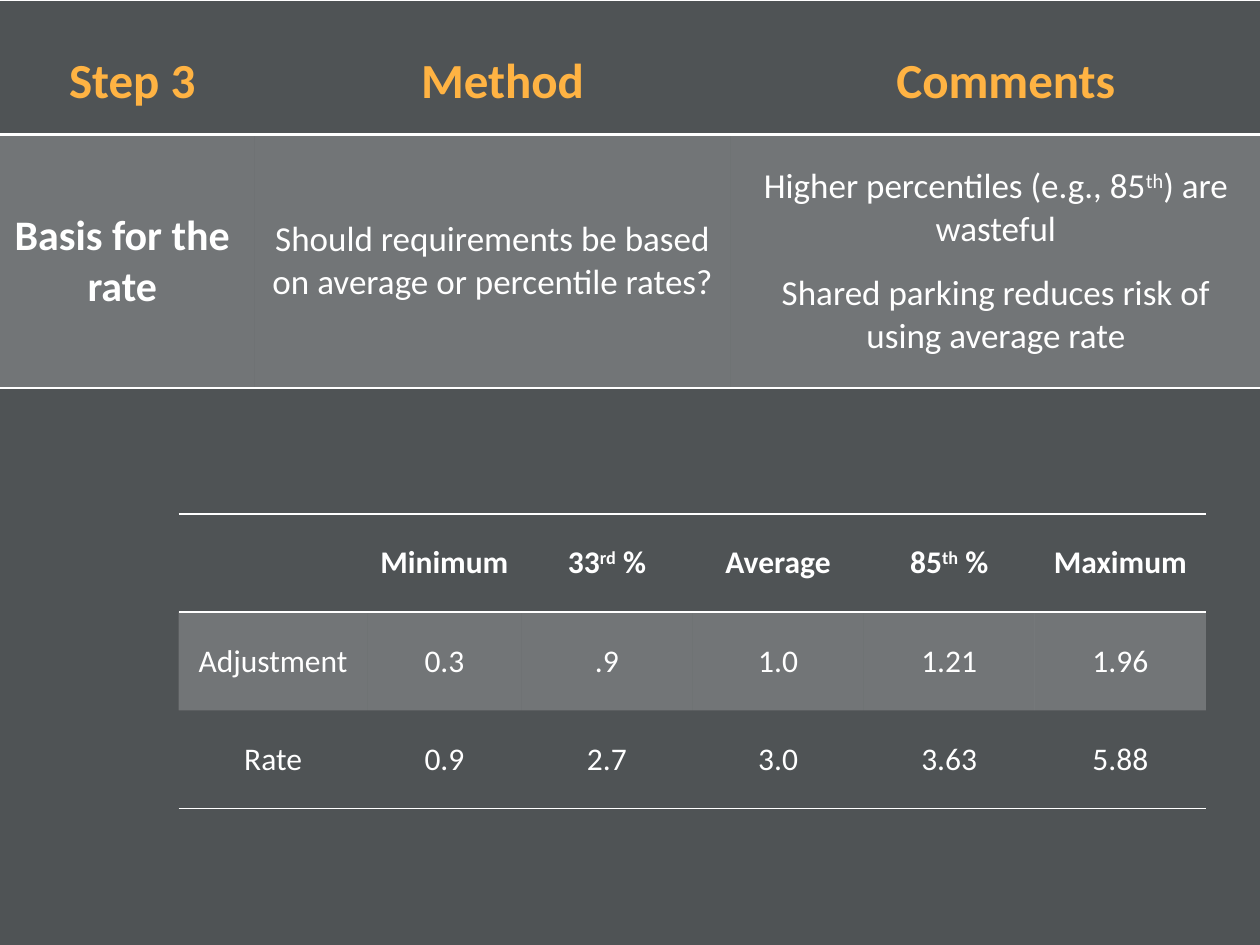
"""Build the parking rate basis slide with its three tables."""
from dataclasses import dataclass

from lxml import etree
from pptx import Presentation
from pptx.dml.color import RGBColor
from pptx.enum.text import MSO_ANCHOR, PP_ALIGN
from pptx.oxml.ns import qn
from pptx.util import Cm, Pt

MIDDLE = MSO_ANCHOR.MIDDLE
CENTER = PP_ALIGN.CENTER
COLORS = {"back": "4F5355", "text": "FFFFFF", "head": "FFB343", "rule": "FFFFFF", "band": "FFFFFF"}
FONT = "Calibri"


@dataclass(frozen=True)
class Style:
    """Look of a cell, with side and end padding in cm."""
    size: int
    bold: bool = False
    color: str = "text"
    side: float = 0.25
    end: float = 0.13
    line: float = 1.0
    band: bool = False


@dataclass(frozen=True)
class Row:
    """Cell texts and their styles; the last style carries on."""
    texts: tuple[str, ...]
    styles: tuple[Style, ...]


@dataclass(frozen=True)
class Grid:
    """Table in cm, with the row edges that carry a rule."""
    left: float
    top: float
    cols: tuple[float, ...]
    height: float
    rows: tuple[Row, ...]
    rules: tuple[int, ...]


HEAD = Style(28, True, "head", side=0.13, end=0, line=1.5)
LABEL = Style(24, True, side=0.13, end=0, band=True)
BODY = Style(20, end=0.25, band=True)
NAME = Style(18, True)
BAND = Style(18, band=True)
PLAIN = Style(18)
WIDE = (5.33, 9.6, 10.69)

GRIDS = (
    Grid(-0.2, 2.72, WIDE, 5.1, (
        Row(("Basis for the rate",
             "Should requirements be based on average or percentile rates?",
             "Higher percentiles (e.g., 85^th^) are wasteful\n"
             "Shared parking reduces risk of using average rate"), (LABEL, BODY)),
    ), (0, 1)),
    Grid(0, 0, WIDE, 2.69, (
        Row(("Step 3", "Method", "Comments"), (HEAD,)),
    ), (0, 1)),
    Grid(3.6, 10.36, (3.81, 3.1) + (3.45,) * 4, 1.98, (
        Row(("", "Minimum", "33^rd^ %", "Average", "85^th^ %", "Maximum"), (NAME,)),
        Row(("Adjustment", "0.3", ".9", "1.0", "1.21", "1.96"), (BAND,)),
        Row(("Rate", "0.9", "2.7", "3.0", "3.63", "5.88"), (PLAIN,)),
    ), (0, 1, 3)),
)


def edge(cell, index: int, side: str, shown: bool) -> None:
    """Set one border of a cell."""
    line = etree.Element(qn(f"a:ln{side}"), w=str(Pt(1)))
    if shown:
        fill = etree.SubElement(line, qn("a:solidFill"))
        etree.SubElement(fill, qn("a:srgbClr"), val=COLORS["rule"])
    else:
        etree.SubElement(line, qn("a:noFill"))
    cell._tc.get_or_add_tcPr().insert(index, line)


def paint(cell, band: bool) -> None:
    """Fill a cell with the pale band or leave it clear."""
    if not band:
        cell.fill.background()
        return
    cell.fill.solid()
    cell.fill.fore_color.rgb = RGBColor.from_string(COLORS["band"])
    tint = cell._tc.tcPr.find(".//" + qn("a:srgbClr"))
    etree.SubElement(tint, qn("a:alpha"), val="20000")


def write(cell, text: str, style: Style) -> None:
    """Write lines into a cell, raising the parts between carets."""
    cell.vertical_anchor = MIDDLE
    cell.margin_left = cell.margin_right = Cm(style.side)
    cell.margin_top = cell.margin_bottom = Cm(style.end)
    for i, words in enumerate(text.split("\n")):
        para = cell.text_frame.add_paragraph() if i else cell.text_frame.paragraphs[0]
        para.alignment = CENTER
        para.line_spacing = style.line
        para.space_before = Pt(12 if i else 0)
        font = para.font
        font.name, font.size, font.bold = FONT, Pt(style.size), style.bold
        font.color.rgb = RGBColor.from_string(COLORS[style.color])
        for j, part in enumerate(words.split("^")):
            if part:
                run = para.add_run()
                run.text = part
                if j % 2:
                    run._r.get_or_add_rPr().set("baseline", "30000")


def draw(slide, grid: Grid) -> None:
    """Add one table to the slide."""
    count = len(grid.rows)
    table = slide.shapes.add_table(
        count, len(grid.cols), Cm(grid.left), Cm(grid.top),
        Cm(sum(grid.cols)), Cm(grid.height * count)).table
    table.first_row = table.horz_banding = False
    for col, width in zip(table.columns, grid.cols):
        col.width = Cm(width)
    for r, row in enumerate(grid.rows):
        table.rows[r].height = Cm(grid.height)
        for c, text in enumerate(row.texts):
            cell = table.cell(r, c)
            style = row.styles[min(c, len(row.styles) - 1)]
            write(cell, text, style)
            paint(cell, style.band)
            shown = (False, False, r in grid.rules, r + 1 in grid.rules)
            for i, side in enumerate("LRTB"):
                edge(cell, i, side, shown[i])


def main() -> None:
    """Create and save the slide."""
    deck = Presentation()
    deck.slide_width, deck.slide_height = Cm(25.4), Cm(19.05)
    slide = deck.slides.add_slide(deck.slide_layouts[6])
    fill = slide.background.fill
    fill.solid()
    fill.fore_color.rgb = RGBColor.from_string(COLORS["back"])
    for grid in GRIDS:
        draw(slide, grid)
    deck.save("out.pptx")


if __name__ == "__main__":
    main()
